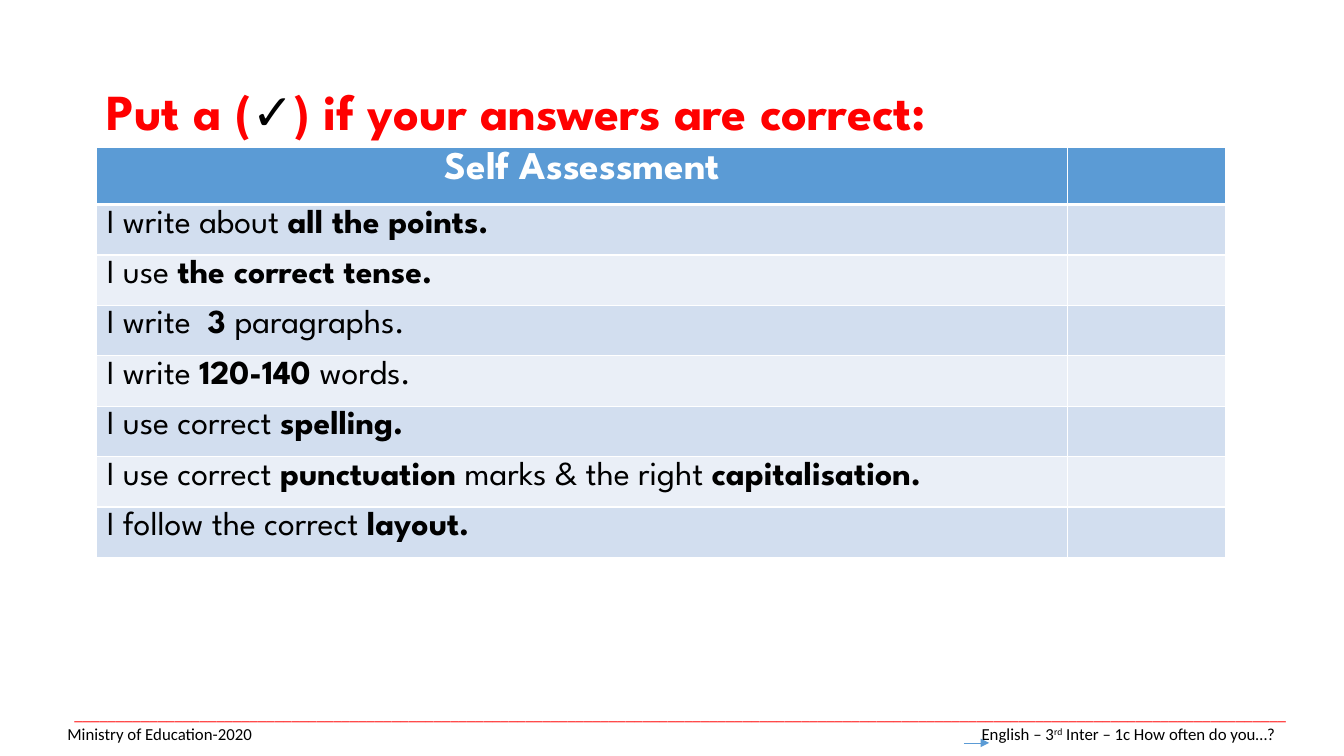
from lxml.etree import SubElement
from pptx import Presentation
from pptx.dml.color import RGBColor
from pptx.enum.shapes import MSO_CONNECTOR
from pptx.enum.text import MSO_ANCHOR, PP_ALIGN
from pptx.oxml.ns import qn
from pptx.util import Inches, Pt

COLORS = {"blue": "5B9BD5", "band": "D2DEEF", "light": "EAEFF7",
          "red": "FF0000", "black": "000000", "white": "FFFFFF"}
HEAD_FONT = "League Spartan"


def add_run(p, text, size=24, font=HEAD_FONT, color="black", bold=False, baseline=0):
    r = p.add_run()
    r.text = text
    r.font.size = Pt(size)
    r.font.name = font
    r.font.bold = bold
    r.font.color.rgb = RGBColor.from_string(COLORS[color])
    if baseline:
        r.font._element.set("baseline", str(baseline))


def style_cell(cell, fill, top=1, bottom=1):
    """Give a cell its fill and white borders, widths in points."""
    tcPr = cell._tc.get_or_add_tcPr()
    for side, width in zip("LRTB", (1, 1, top, bottom)):
        ln = SubElement(tcPr, qn(f"a:ln{side}"), w=str(Pt(width)))
        solid = SubElement(ln, qn("a:solidFill"))
        SubElement(solid, qn("a:srgbClr"), val=COLORS["white"])
    cell.fill.solid()
    cell.fill.fore_color.rgb = RGBColor.from_string(COLORS[fill])


prs = Presentation()
prs.slide_width, prs.slide_height = Inches(13.33), Inches(7.5)
s = prs.slides.add_slide(prs.slide_layouts[6])

# Small arrow in the footer
arrow = s.shapes.add_connector(MSO_CONNECTOR.STRAIGHT, Inches(9.56), Inches(7.37),
                               Inches(9.81), Inches(7.37))
arrow.line.color.rgb = RGBColor.from_string(COLORS["blue"])
arrow.line.width = Pt(0.5)
SubElement(arrow.line._get_or_add_ln(), qn("a:tailEnd"), type="triangle")
SubElement(arrow._element.spPr, qn("a:effectLst"))

# Checklist: each row is a list of (text, bold) pieces
checklist = [
    [("I write about ", False), ("all the points.", True)],
    [("I use ", False), ("the correct tense.", True)],
    [("I write  ", False), ("3 ", True), ("paragraphs.", False)],
    [("I write ", False), ("120-140 ", True), ("words.", False)],
    [("I use correct ", False), ("spelling.", True)],
    [("I use correct ", False), ("punctuation", True),
     (" marks & the right ", False), ("capitalisation.", True)],
    [("I follow the correct ", False), ("layout.", True)],
]
table = s.shapes.add_table(len(checklist) + 1, 2, Inches(0.96), Inches(1.46),
                           Inches(11.2), Inches(4.07)).table
table.columns[0].width, table.columns[1].width = Inches(9.63), Inches(1.57)
table.rows[0].height = Inches(0.57)
for cell in table.rows[0].cells:
    style_cell(cell, "blue", bottom=3)
p = table.cell(0, 0).text_frame.paragraphs[0]
p.alignment = PP_ALIGN.CENTER
add_run(p, "Self Assessment", size=28, color="white", bold=True)

for i, pieces in enumerate(checklist, start=1):
    table.rows[i].height = Inches(0.5)
    for cell in table.rows[i].cells:
        style_cell(cell, "band" if i % 2 else "light", top=3 if i == 1 else 1)
    p = table.cell(i, 0).text_frame.paragraphs[0]
    for text, bold in pieces:
        add_run(p, text, bold=bold)

# Title
tf = s.shapes.add_textbox(Inches(0.96), Inches(0.75), Inches(10.12), Inches(0.71)).text_frame
tf.word_wrap = True
p = tf.paragraphs[0]
add_run(p, "Put a (", size=36, color="red", bold=True)
add_run(p, "✓", size=36, font="Arial", bold=True)
add_run(p, ") if your answers are correct:", size=36, color="red", bold=True)

# Footer: rule, then left and right text split by a right tab
tf = s.shapes.add_textbox(Inches(0.57), Inches(6.98), Inches(12.37), Inches(0.4)).text_frame
tf.word_wrap = True
tf.vertical_anchor = MSO_ANCHOR.MIDDLE
footer = {"size": 12, "font": "Calibri"}
p = tf.paragraphs[0]
p.alignment = PP_ALIGN.CENTER
add_run(p, "_" * 145, color="red", **footer)
p = tf.add_paragraph()
tabs = SubElement(p._p.get_or_add_pPr(), qn("a:tabLst"))
SubElement(tabs, qn("a:tab"), pos=str(Inches(11.98)), algn="r")
add_run(p, "Ministry of Education-2020\tEnglish – 3", **footer)
add_run(p, "rd", baseline=30000, **footer)
add_run(p, " Inter – 1c How often do you…?", **footer)

prs.save("out.pptx")
